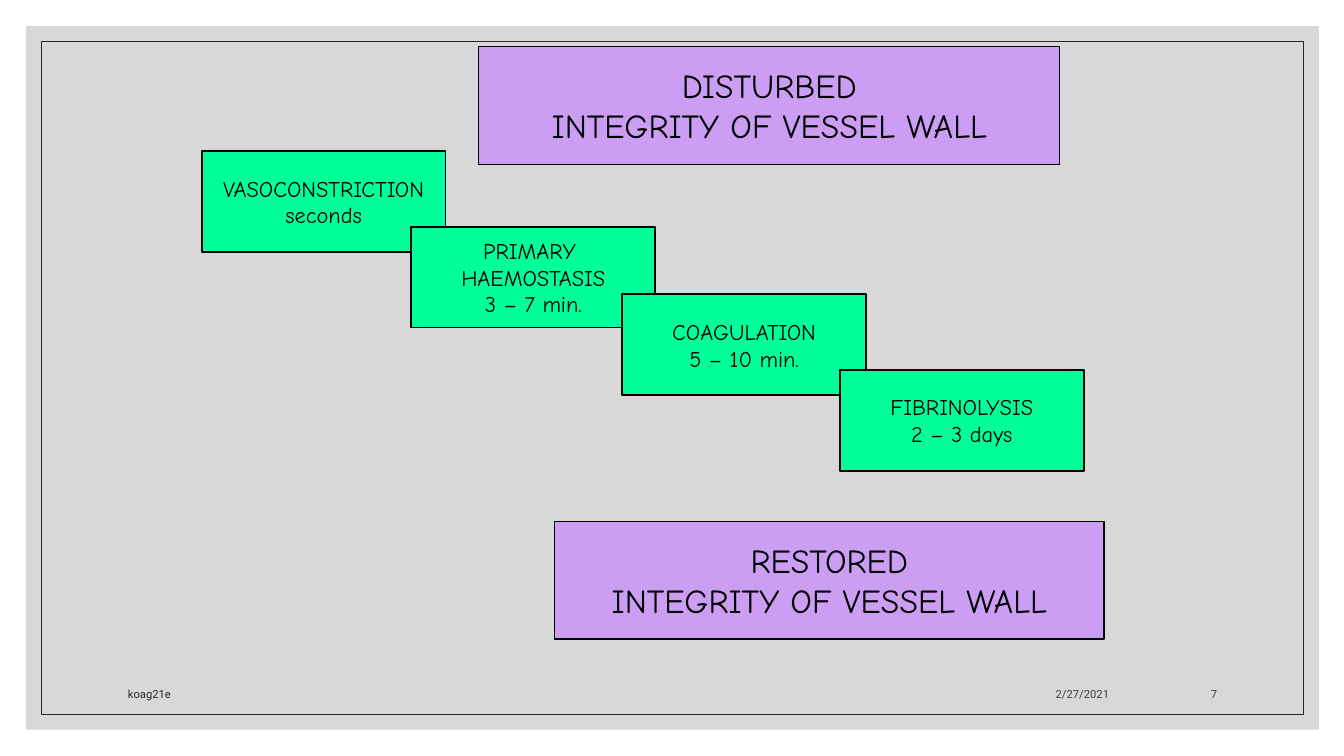
from dataclasses import dataclass

from lxml.etree import SubElement
from pptx import Presentation
from pptx.dml.color import RGBColor
from pptx.enum.shapes import MSO_SHAPE as Preset
from pptx.enum.text import MSO_ANCHOR as Anchor, PP_ALIGN as Align
from pptx.oxml.ns import qn
from pptx.shapes.autoshape import Shape
from pptx.slide import Slide
from pptx.util import Emu, Pt

PX = 9144  # EMU per px, 100 px to the inch
BLACK = "000000"
GREEN = "00FF99"
PURPLE = "CB9EF3"


@dataclass(frozen=True)
class Area:
    left: int
    top: int
    width: int
    height: int

    def emu(self) -> list[Emu]:
        return [Emu(n * PX) for n in (self.left, self.top, self.width, self.height)]


@dataclass(frozen=True)
class Box:
    area: Area
    text: str
    fill: str
    size: int
    line: float


@dataclass(frozen=True)
class Note:
    area: Area
    text: str
    color: str
    align: Align


def step(left: int, top: int, text: str) -> Box:
    return Box(Area(left, top, 242, 100), text, GREEN, 16, 1.25)


def state(left: int, top: int, width: int, word: str) -> Box:
    text = f"{word}\nINTEGRITY OF VESSEL WALL"
    return Box(Area(left, top, width, 117), text, PURPLE, 24, 0.75)


BOXES = [
    state(475, 46, 576, "DISTURBED"),
    step(200, 150, "VASOCONSTRICTION\nseconds"),
    step(408, 225, "PRIMARY \nHAEMOSTASIS\n3 – 7 min."),
    step(617, 292, "COAGULATION\n5 – 10 min."),
    step(833, 367, "FIBRINOLYSIS\n2 – 3 days"),
    state(550, 517, 545, "RESTORED"),
]
NOTES = [
    Note(Area(794, 660, 316, 40), "2/27/2021", "404040", Align.RIGHT),
    Note(Area(117, 660, 636, 40), "koag21e", "262626", Align.LEFT),
    Note(Area(1125, 660, 92, 40), "7", "404040", Align.RIGHT),
]


def rgb(color: str) -> RGBColor:
    return RGBColor.from_string(color)


def add_rect(slide: Slide, area: Area, fill: str = "", line: str = "",
             weight: float = 0) -> Shape:
    """Add a rectangle; an empty colour means no fill or no line."""
    rect = slide.shapes.add_shape(Preset.RECTANGLE, *area.emu())
    rect.shadow.inherit = False
    if fill:
        rect.fill.solid()
        rect.fill.fore_color.rgb = rgb(fill)
    else:
        rect.fill.background()
    if line:
        rect.line.color.rgb = rgb(line)
        rect.line.width = Pt(weight)
    else:
        rect.line.fill.background()
    return rect


def set_text(shape: Shape, text: str, font: str, size: int, color: str,
             align: Align, anchor: Anchor, wrap: bool) -> None:
    frame = shape.text_frame
    frame.text = text
    frame.word_wrap = wrap
    frame.vertical_anchor = anchor
    for para in frame.paragraphs:
        para.alignment = align
        for run in para.runs:
            run.font.name = font
            run.font.size = Pt(size)
            run.font.color.rgb = rgb(color)


def add_frame(slide: Slide) -> None:
    panel = add_rect(slide, Area(26, 26, 1282, 698), fill="BFBFBF")
    tint = panel.fill._xPr.find(f".//{qn('a:srgbClr')}")
    SubElement(tint, qn("a:alpha"), val="60000")
    add_rect(slide, Area(41, 41, 1252, 668), line="262626", weight=0.5)


def add_box(slide: Slide, box: Box) -> None:
    rect = add_rect(slide, box.area, box.fill, BLACK, box.line)
    set_text(rect, box.text, "Comic Neue", box.size, BLACK,
             Align.CENTER, Anchor.MIDDLE, False)


def add_note(slide: Slide, note: Note) -> None:
    label = slide.shapes.add_textbox(*note.area.emu())
    set_text(label, note.text, "Roboto", 8, note.color,
             note.align, Anchor.BOTTOM, True)


def main() -> None:
    deck = Presentation()
    deck.slide_width, deck.slide_height = Emu(1333 * PX), Emu(750 * PX)
    slide = deck.slides.add_slide(deck.slide_layouts[6])
    add_frame(slide)
    for box in BOXES:
        add_box(slide, box)
    for note in NOTES:
        add_note(slide, note)
    deck.save("out.pptx")


if __name__ == "__main__":
    main()
